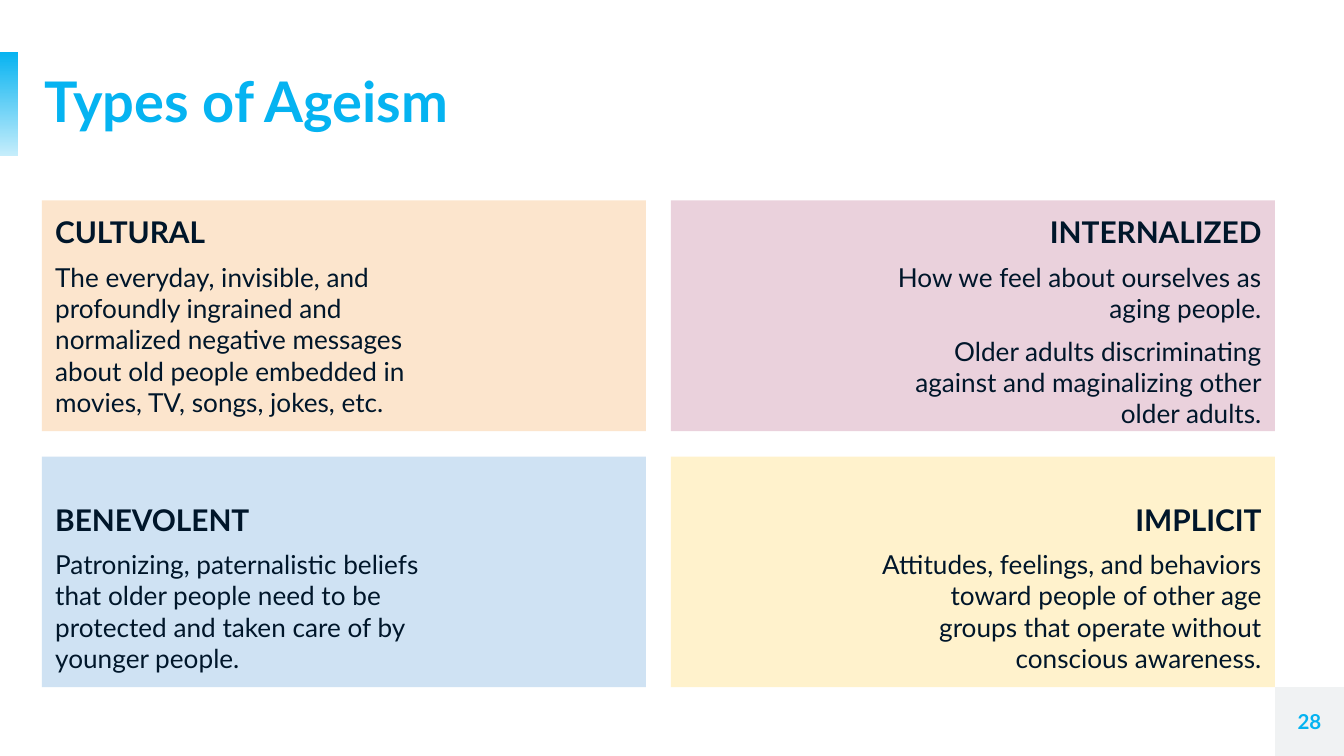
from lxml.etree import SubElement
from pptx import Presentation
from pptx.dml.color import RGBColor
from pptx.enum.shapes import MSO_SHAPE
from pptx.enum.text import MSO_ANCHOR, PP_ALIGN
from pptx.oxml.ns import qn
from pptx.util import Pt

COLORS = {
    "accent": "05B3F1", "ink": "00162A", "corner": "F0F2F3",
    "orange": "FCE5CD", "pink": "EAD1DC", "blue": "CFE2F3", "yellow": "FFF2CC",
}
TITLE = "Types of Ageism"
PAGE_NUMBER = "28"
CARDS = [
    ("CULTURAL", "orange", [
        "The everyday, invisible, and profoundly ingrained and normalized negative "
        "messages about old people embedded in movies, TV, songs, jokes, etc."]),
    ("INTERNALIZED", "pink", [
        "How we feel about ourselves as aging people.",
        "Older adults discriminating against and maginalizing other older adults."]),
    ("BENEVOLENT", "blue", [
        "Patronizing, paternalistic beliefs that older people need to be protected "
        "and taken care of by younger people."]),
    ("IMPLICIT", "yellow", [
        "Attitudes, feelings, and behaviors toward people of other age groups that "
        "operate without conscious awareness."]),
]
WIDTH, HEIGHT = 720, 405
CORNER = 36.9
CARD_LEFT, CARD_TOP = 22.5, 107.4
CARD_WIDTH, CARD_HEIGHT = 323.5, 123.6
STEP_X, STEP_Y = 337, 137.2
INSET, WIDE_INSET = 7.2, 108


def color(name):
    return RGBColor.from_string(COLORS[name])


def add_rectangle(left, top, width, height, fill=None):
    box = page.shapes.add_shape(
        MSO_SHAPE.RECTANGLE, Pt(left), Pt(top), Pt(width), Pt(height))
    box.shadow.inherit = False
    box.line.fill.background()
    if fill:
        box.fill.solid()
        box.fill.fore_color.rgb = color(fill)
    return box


def set_frame(box, anchor, left=0, top=0, right=0, bottom=0):
    frame = box.text_frame
    values = {
        "word_wrap": True, "vertical_anchor": anchor,
        "margin_left": Pt(left), "margin_top": Pt(top),
        "margin_right": Pt(right), "margin_bottom": Pt(bottom),
    }
    for name, value in values.items():
        setattr(frame, name, value)
    return frame


def write(para, text, size, ink, bold, **layout):
    span = para.add_run()
    span.text = text
    for name, value in {"name": "Lato", "size": Pt(size), "bold": bold}.items():
        setattr(span.font, name, value)
    span.font.color.rgb = color(ink)
    for name, value in layout.items():
        setattr(para, name, value)


def add_label(text, left, top, width, height, size, **layout):
    box = page.shapes.add_textbox(Pt(left), Pt(top), Pt(width), Pt(height))
    frame = set_frame(box, MSO_ANCHOR.MIDDLE)
    write(frame.paragraphs[0], text, size, "accent", True, **layout)


def add_accent_bar():
    bar = add_rectangle(-0.7, 28, 10.1, 55.6)
    bar.fill.gradient()
    bar.fill.gradient_angle = 90
    for stop, position in zip(bar.fill.gradient_stops, (0, 1)):
        stop.color.rgb = color("accent")
        stop.position = position
    first = next(bar.element.iter(qn("a:srgbClr")))
    SubElement(first, qn("a:alpha"), val="22000")


def add_card(index, heading, fill, texts):
    row, column = divmod(index, 2)
    box = add_rectangle(CARD_LEFT + column * STEP_X, CARD_TOP + row * STEP_Y,
                        CARD_WIDTH, CARD_HEIGHT, fill)
    left, right = (WIDE_INSET, INSET) if column else (INSET, WIDE_INSET)
    anchor = MSO_ANCHOR.BOTTOM if row else MSO_ANCHOR.TOP
    align = PP_ALIGN.RIGHT if column else PP_ALIGN.LEFT
    frame = set_frame(box, anchor, left, INSET, right, INSET)
    write(frame.paragraphs[0], heading, 16, "ink", True, alignment=align)
    for text in texts:
        write(frame.add_paragraph(), text, 14, "ink", False,
              alignment=align, space_before=Pt(6))
    frame.paragraphs[-1].space_after = Pt(6)


deck = Presentation()
deck.slide_width, deck.slide_height = Pt(WIDTH), Pt(HEIGHT)
page = deck.slides.add_slide(deck.slide_layouts[6])

corner = (WIDTH - CORNER, HEIGHT - CORNER, CORNER, CORNER)
add_accent_bar()
add_rectangle(*corner, "corner")
add_label(TITLE, 23.8, 28, 667.4, 55.6, 30, line_spacing=0.9)
for index, card in enumerate(CARDS):
    add_card(index, *card)
add_label(PAGE_NUMBER, *corner, 11, alignment=PP_ALIGN.CENTER)

deck.save("out.pptx")
